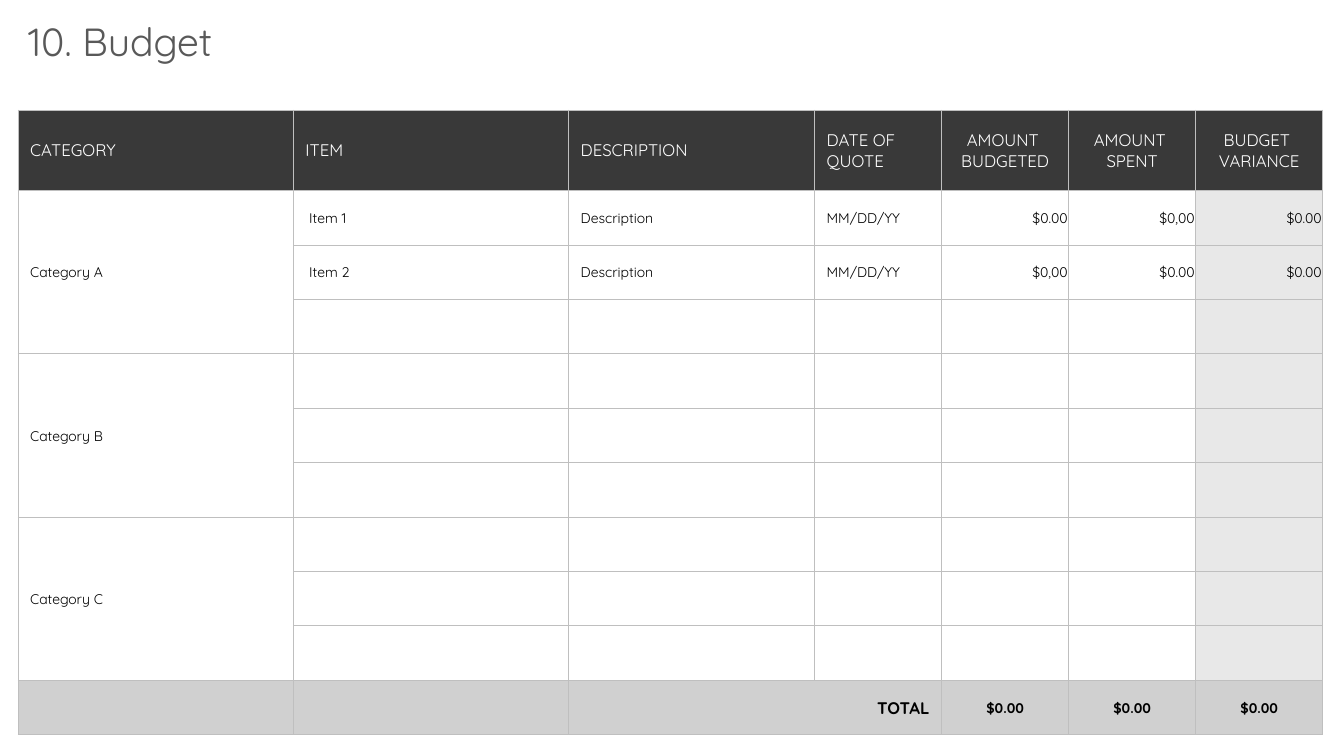
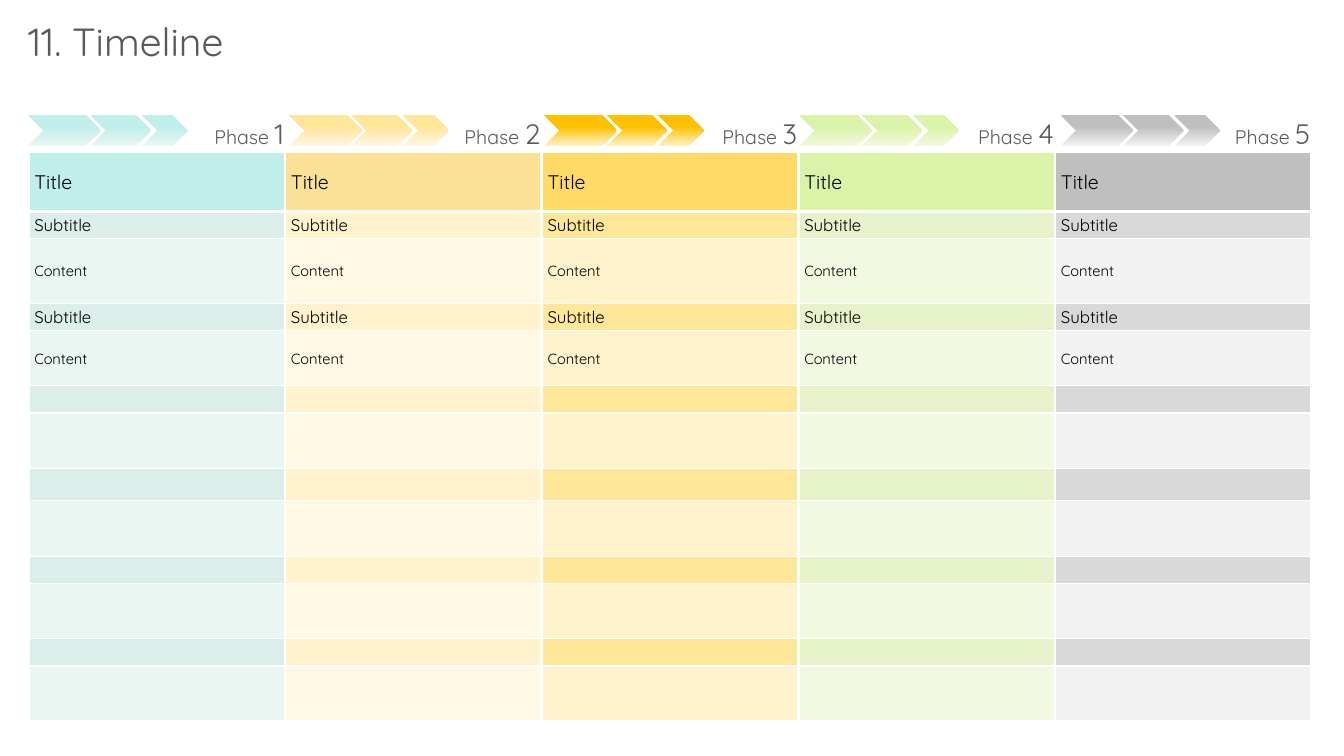
import pptx
import pptx.util
import pptx.dml.color
import pptx.enum.shapes
import pptx.enum.text
import pptx.oxml.ns
from lxml import etree

Inches = pptx.util.Inches
qn = pptx.oxml.ns.qn
FONT = "Quicksand"
HUES = {
    "title": "595959", "black": "000000", "white": "FFFFFF",
    "head": "393939", "grid": "BFBFBF", "vary": "E8E8E8", "total": "D0D0D0",
}
ALIGN = {
    "left": pptx.enum.text.PP_ALIGN.LEFT,
    "center": pptx.enum.text.PP_ALIGN.CENTER,
    "right": pptx.enum.text.PP_ALIGN.RIGHT,
}
ANCHOR = pptx.enum.text.MSO_ANCHOR
rgb = pptx.dml.color.RGBColor.from_string


def put(frame, text, size=10, color="black", bold=False, align="left"):
    """Append text to the first paragraph; a newline is a line break."""
    para = frame.paragraphs[0]
    para.alignment = ALIGN[align]
    points = str(int(size * 100))
    if not text:
        etree.SubElement(para._p, qn("a:endParaRPr"), sz=points)
        return
    for num, part in enumerate(text.split("\n")):
        if num:
            para.add_line_break()
            etree.SubElement(para._p[-1], qn("a:rPr"), sz=points)
        run = para.add_run()
        run.text = part
        run.font.name = FONT
        run.font.size = pptx.util.Pt(size)
        run.font.bold = bold
        run.font.color.rgb = rgb(HUES[color])


def dress(cell, fill, line, widths, left=0.01, right=0.01, base=0):
    """Set borders (left, right, top, bottom), fill and insets of a cell."""
    props = cell._tc.get_or_add_tcPr()
    for side, width in zip("LRTB", widths):
        edge = etree.SubElement(props, qn("a:ln" + side), w=str(pptx.util.Pt(width)))
        solid = etree.SubElement(edge, qn("a:solidFill"))
        etree.SubElement(solid, qn("a:srgbClr"), val=HUES[line])
    if fill:
        cell.fill.solid()
        cell.fill.fore_color.rgb = rgb(fill)
    else:
        cell.fill.background()
    cell.margin_left, cell.margin_right = Inches(left), Inches(right)
    cell.margin_top, cell.margin_bottom = Inches(0.01), Inches(base)
    cell.vertical_anchor = ANCHOR.MIDDLE


deck = pptx.Presentation()
deck.slide_width, deck.slide_height = Inches(13.33), Inches(7.5)

# Slides with their titles and empty tables
plans = [
    ("10. Budget", (0.18, 1.09, 12.95, 6.16),
     [2.73, 2.73, 2.44] + [1.26] * 4, [0.8] + [0.54] * 10),
    ("11. Timeline", (0.28, 1.14, 12.73, 6.01),
     [12.73 / 5] * 5,
     [0.3, 0.59, 0.27, 0.64, 0.27, 0.55, 0.27, 0.55, 0.32, 0.55, 0.27, 0.55, 0.27, 0.55]),
]
slides, grids = [], []
for name, spot, cols, rows in plans:
    slide = deck.slides.add_slide(deck.slide_layouts[5])
    title = slide.shapes.title
    title.left, title.top = Inches(0.18), Inches(0.12)
    title.width, title.height = Inches(2.56), Inches(0.57)
    frame = title.text_frame
    frame.word_wrap = True
    frame.auto_size = pptx.enum.text.MSO_AUTO_SIZE.NONE
    frame.vertical_anchor = ANCHOR.TOP
    put(frame, name, size=28, color="title")
    grid = slide.shapes.add_table(len(rows), len(cols), *map(Inches, spot)).table
    grid.first_row = grid.horz_banding = False
    for col, width in zip(grid.columns, cols):
        col.width = Inches(width)
    for row, height in zip(grid.rows, rows):
        row.height = Inches(height)
    slides.append(slide)
    grids.append(grid)

# Budget table
heads = ["CATEGORY", "ITEM", "DESCRIPTION", "DATE OF QUOTE",
         "AMOUNT \nBUDGETED", "AMOUNT \nSPENT", "BUDGET \nVARIANCE"]
words = {(0, col): text for col, text in enumerate(heads)}
items = [
    [" Item 1", "Description", "MM/DD/YY", "$0.00", "$0,00", "$0.00"],
    [" Item 2", "Description", "MM/DD/YY", "$0,00", "$0.00", "$0.00"],
]
for row, item in enumerate(items, 1):
    words.update({(row, col): text for col, text in enumerate(item, 1)})
for num, mark in enumerate("ABC"):
    words[1 + 3 * num, 0] = "Category " + mark
words[10, 2] = "TOTAL"
words.update({(10, col): "$0.00" for col in (4, 5, 6)})

budget = grids[0]
for row in range(11):
    for col in range(7):
        cell = budget.cell(row, col)
        head, last = row == 0, row == 10
        sum_tag = (row, col) == (10, 2)
        if head:
            fill = HUES["head"]
        elif last:
            fill = HUES["total"]
        else:
            fill = HUES["vary"] if col == 6 else None
        if sum_tag or (col > 3 and not head and not last):
            align = "right"
        else:
            align = "center" if col > 3 else "left"
        dress(cell, fill, "grid", [0.5] * 4,
              left=0.12 if col < 4 and not last else 0.01,
              right=0.12 if sum_tag else 0.01)
        put(cell.text_frame, words.get((row, col), ""),
            size=12 if head or sum_tag else 10,
            color="white" if head else "black", bold=last, align=align)
for row in (1, 4, 7):
    budget.cell(row, 0).merge(budget.cell(row + 2, 0))
budget.cell(10, 2).merge(budget.cell(10, 3))

# Timeline phases: arrow start, gradient pair, then title, subtitle, content fills
phases = [
    (0.28, ("E9F6F2", "BFEEEB"), ("BFEEEB", "DBEEE9", "E9F6F2")),
    (2.87, ("FFF7E5", "FFE699"), ("FAE196", "FFF2CC", "FFF8E5")),
    (5.4, ("FFF2CC", "FFC000"), ("FFDA66", "FFE699", "FFF2CC")),
    (7.93, ("F2F9E0", "DBF2A9"), ("DBF2A9", "E5F2CA", "F2F9E1")),
    (10.52, ("F2F2F2", "BFBFBF"), ("BFBFBF", "D9D9D9", "F2F2F2")),
]
steps = [(0, 0.72), (0.62, 0.6), (1.13, 0.45)]
kinds = [("Title", 14), ("Subtitle", 12), ("Content", 10.5)]
thick = 2.25
for col, (start, blend, fills) in enumerate(phases):
    # Phase label
    cell = grids[1].cell(0, col)
    dress(cell, None, "white", [1, 1, 1, thick], base=0.01)
    cell.vertical_anchor = ANCHOR.BOTTOM
    put(cell.text_frame, "Phase ", size=14, color="title", align="right")
    put(cell.text_frame, str(col + 1), size=20, color="title", align="right")

    # Title, then subtitle and content rows in turn
    for row in range(1, 14):
        kind = 0 if row == 1 else 1 + row % 2
        cell = grids[1].cell(row, col)
        top = thick if row < 3 else 1
        base = thick if row in (1, 13) else 1
        dress(cell, fills[kind], "white", [thick, thick, top, base], left=0.06)
        text, size = kinds[kind]
        put(cell.text_frame, text if row < 6 else "", size=size)

    # Arrows
    for shift, width in steps:
        arrow = slides[1].shapes.add_shape(
            pptx.enum.shapes.MSO_SHAPE.CHEVRON,
            Inches(start + shift), Inches(1.14), Inches(width), Inches(0.31))
        arrow.shadow.inherit = False
        arrow.line.fill.background()
        arrow.fill.gradient()
        arrow.fill.gradient_angle = 90
        for stop, place, hue in zip(arrow.fill.gradient_stops, (0, 0.63), blend):
            stop.position = place
            stop.color.rgb = rgb(hue)

deck.save("out.pptx")
